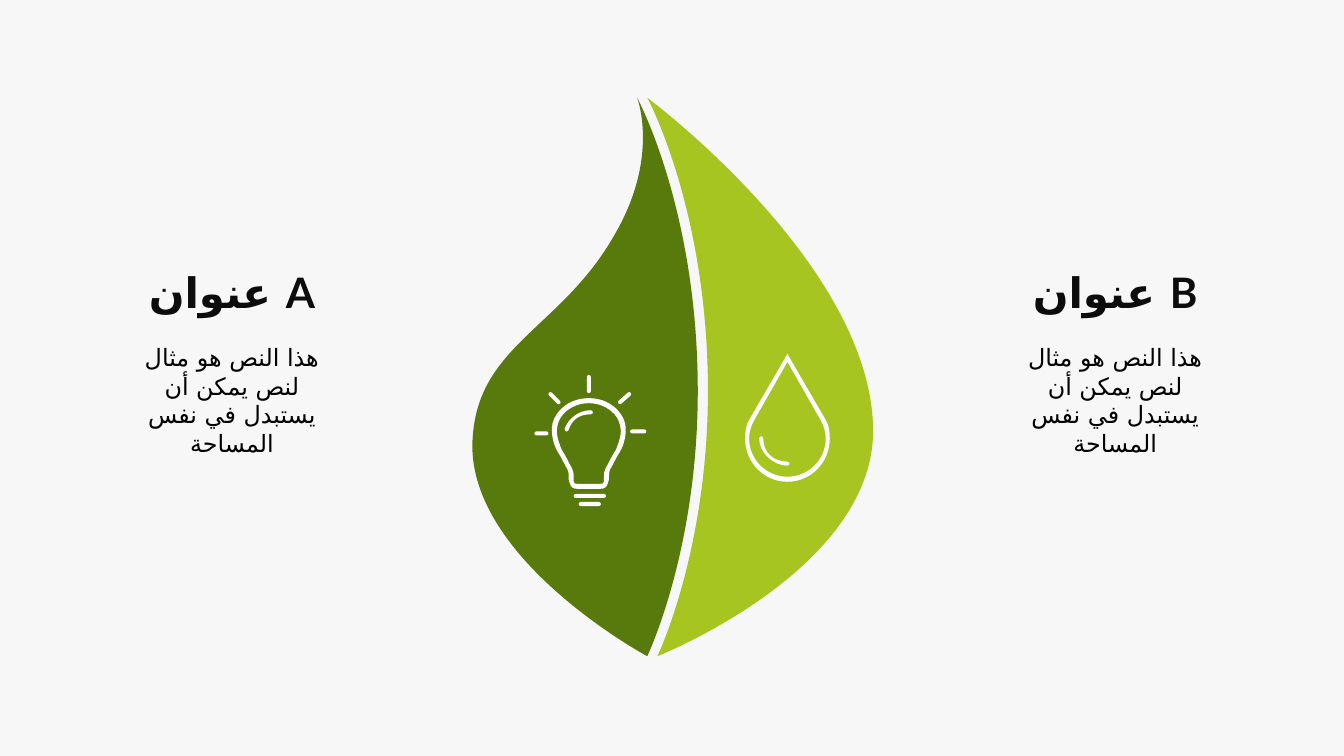
"""Build a two-part leaf comparison slide with a light bulb and a water drop."""
from dataclasses import dataclass
from math import hypot

from lxml import etree
from pptx import Presentation
from pptx.dml.color import RGBColor
from pptx.enum.text import MSO_ANCHOR, MSO_AUTO_SIZE, PP_ALIGN
from pptx.oxml.ns import qn
from pptx.util import Inches, Pt

TOP = MSO_ANCHOR.TOP
CENTER = PP_ALIGN.CENTER
NO_AUTOFIT = MSO_AUTO_SIZE.NONE


@dataclass(frozen=True)
class Theme:
    background: RGBColor = RGBColor.from_string("F7F7F7")
    dark_leaf: RGBColor = RGBColor.from_string("587A0D")
    light_leaf: RGBColor = RGBColor.from_string("A7C520")
    icon: RGBColor = RGBColor.from_string("FFFFFF")
    heading: RGBColor = RGBColor.from_string("0C0C0C")
    body: RGBColor = RGBColor.from_string("000000")
    font: str = "Lato"
    arabic_font: str = "DejaVu Sans"
    heading_size: int = 30
    body_size: int = 17


THEME = Theme()
COMPARISON_LAYOUT = 4
BAND_RADIUS = 0.02
BODY = "هذا النص هو مثال لنص يمكن أن يستبدل في نفس المساحة"
COLUMNS = [
    {"heading": "عنوان A", "body": BODY, "center": 2.3, "slots": (1, 2)},
    {"heading": "عنوان B", "body": BODY, "center": 11.06, "slots": (3, 4)},
]
HEADING_BOX = {"top": 2.64, "width": 1.8, "height": 0.72, "margins": (0, 0)}
BODY_BOX = {"top": 3.35, "width": 2.24, "height": 1.24, "margins": (0.1, 0.05)}

DARK_LEAF = [
    (6.92, 3.74),
    (6.89, 2.02), (6.32, 0.97), (6.32, 0.97),
    (6.32, 0.97), (6.55, 1.56), (6.09, 2.34),
    (5.57, 3.25), (4.76, 3.42), (4.69, 4.32),
    (4.58, 5.52), (6.42, 6.51), (6.42, 6.51),
    (6.42, 6.51), (6.95, 5.41), (6.92, 3.74),
]
LIGHT_LEAF = [
    (6.42, 0.97),
    (6.42, 0.97), (6.99, 2.02), (7.02, 3.74),
    (7.05, 5.41), (6.52, 6.51), (6.52, 6.51),
    (6.52, 6.51), (8.67, 5.66), (8.66, 4.26),
    (8.64, 2.62), (6.42, 0.97), (6.42, 0.97),
]
BULB_OUTER = [
    (5.84, 3.95),
    (6.04, 3.95), (6.17, 4.08), (6.2, 4.2),
    (6.22, 4.3), (6.19, 4.41), (6.15, 4.48),
    (6.11, 4.54), (6.09, 4.59), (6.05, 4.66),
    (6.04, 4.68), (6.04, 4.7), (6.04, 4.73),
    (6.04, 4.75), (6.04, 4.77), (6.03, 4.79),
    (6.02, 4.83), (6, 4.85), (5.95, 4.85),
]
BULB_INNER = [
    (5.84, 4),
    (6.01, 4), (6.13, 4.11), (6.15, 4.22),
    (6.17, 4.28), (6.15, 4.36), (6.11, 4.46),
    (6.07, 4.52), (6.05, 4.57), (6.01, 4.64),
    (5.99, 4.67), (5.99, 4.7), (5.99, 4.73),
    (5.99, 4.75), (5.99, 4.76), (5.99, 4.78),
    (5.98, 4.8), (5.98, 4.8), (5.95, 4.8),
]
BULB_GLEAM = [(5.62, 4.26), (5.65, 4.17), (5.73, 4.09), (5.86, 4.09)]
BULB_LINES = [
    ((5.32, 4.3), (5.42, 4.3)),
    ((5.46, 3.91), (5.54, 3.99)),
    ((5.84, 3.74), (5.84, 3.88)),
    ((6.24, 3.91), (6.15, 3.99)),
    ((6.27, 4.28), (6.39, 4.28)),
    ((5.71, 4.92), (5.99, 4.92)),
    ((5.76, 5), (5.94, 5)),
]
DROP_OUTER = [
    (7.81, 3.51),
    (7.81, 3.51), (7.82, 3.52), (7.82, 3.53),
    (7.82, 3.53), (8.18, 4.15), (8.18, 4.15),
    (8.22, 4.21), (8.23, 4.28), (8.23, 4.35),
    (8.23, 4.59), (8.04, 4.78), (7.81, 4.78),
]
DROP_INNER = [
    (7.81, 3.59),
    (7.81, 3.59), (8.14, 4.17), (8.14, 4.17),
    (8.17, 4.22), (8.19, 4.29), (8.19, 4.35),
    (8.19, 4.56), (8.02, 4.73), (7.81, 4.73),
]
DROP_GLEAM = [(7.55, 4.35), (7.55, 4.49), (7.67, 4.6), (7.81, 4.6)]
HALVES = [
    {"leaf": DARK_LEAF, "color": THEME.dark_leaf, "gleam": BULB_GLEAM,
     "rims": (BULB_OUTER, BULB_INNER), "lines": BULB_LINES},
    {"leaf": LIGHT_LEAF, "color": THEME.light_leaf, "gleam": DROP_GLEAM,
     "rims": (DROP_OUTER, DROP_INNER), "lines": []},
]


def mirrored(half):
    axis = half[0][0]
    other = [(2 * axis - x, y) for x, y in reversed(half)]
    if half[-1] == other[0]:
        return half + other[1:]
    return half + [half[-1], other[0]] + other


def straight(start, end):
    return [tuple(a + (b - a) * step / 3 for a, b in zip(start, end)) for step in range(4)]


def band(curve):
    sides = []
    for tail, tip in (curve[:2], curve[2:]):
        dx, dy = tip[0] - tail[0], tip[1] - tail[1]
        scale = BAND_RADIUS / hypot(dx, dy)
        sides.append((dx * scale, dy * scale))
    tangents = [sides[0], sides[0], sides[1], sides[1]]
    left = [(x - ty, y + tx) for (x, y), (tx, ty) in zip(curve, tangents)]
    right = [(x + ty, y - tx) for (x, y), (tx, ty) in zip(curve, tangents)]

    def cap(first, last, tangent, sign):
        return [tuple(v + sign * t * 4 / 3 for v, t in zip(point, tangent))
                for point in (first, last)]

    return (left + cap(left[3], right[3], sides[1], 1) + right[::-1]
            + cap(right[0], left[0], sides[0], -1) + left[:1])


def add_outline(group, contours, color):
    paths = [[(Inches(x), Inches(y)) for x, y in contour] for contour in contours]
    builder = group.shapes.build_freeform(*paths[0][0], scale=1.0)
    for number, points in enumerate(paths):
        if number:
            builder.move_to(*points[0])
        builder.add_line_segments(points[1:], close=True)
    outline = builder.convert_to_shape()
    segments = list(outline._element.iter(qn("a:lnTo")))
    for first in range(0, len(segments), 3):
        cubic = etree.Element(qn("a:cubicBezTo"))
        segments[first].addprevious(cubic)
        for segment in segments[first:first + 3]:
            cubic.append(segment[0])
            segment.getparent().remove(segment)
    outline.shadow.inherit = False
    outline.fill.solid()
    outline.fill.fore_color.rgb = color
    outline.line.fill.background()


def add_half(slide, half):
    group = slide.shapes.add_group_shape()
    add_outline(group, [half["leaf"]], half["color"])
    strokes = [half["gleam"]] + [straight(*line) for line in half["lines"]]
    icon = [mirrored(rim) for rim in half["rims"]] + [band(stroke) for stroke in strokes]
    add_outline(group, icon, THEME.icon)


def fill_text(holder, text, center, box, size, color, bold):
    holder.left, holder.top = Inches(center - box["width"] / 2), Inches(box["top"])
    holder.width, holder.height = Inches(box["width"]), Inches(box["height"])
    frame = holder.text_frame
    side, edge = map(Inches, box["margins"])
    frame.margin_left = frame.margin_right = side
    frame.margin_top = frame.margin_bottom = edge
    frame.vertical_anchor = TOP
    frame.auto_size = NO_AUTOFIT
    frame.word_wrap = True
    paragraph = frame.paragraphs[0]
    paragraph.alignment = CENTER
    paragraph.space_before = Pt(0)
    properties = paragraph._p.get_or_add_pPr()
    properties.set("marL", "0")
    properties.set("indent", "0")
    etree.SubElement(properties, qn("a:buNone"))
    run = paragraph.add_run()
    run.text = text
    run.font.name = THEME.font
    run.font.size = Pt(size)
    run.font.bold = bold
    run.font.color.rgb = color
    etree.SubElement(run._r.get_or_add_rPr(), qn("a:cs"), typeface=THEME.arabic_font)


def main():
    deck = Presentation()
    deck.slide_width, deck.slide_height = Inches(13.33), Inches(7.5)
    slide = deck.slides.add_slide(deck.slide_layouts[COMPARISON_LAYOUT])
    slide.background.fill.solid()
    slide.background.fill.fore_color.rgb = THEME.background
    title = slide.shapes.title._element
    title.getparent().remove(title)
    holders = {holder.placeholder_format.idx: holder for holder in slide.placeholders}
    for column in COLUMNS:
        heading, body = (holders[slot] for slot in column["slots"])
        fill_text(heading, column["heading"], column["center"], HEADING_BOX,
                  THEME.heading_size, THEME.heading, True)
        fill_text(body, column["body"], column["center"], BODY_BOX,
                  THEME.body_size, THEME.body, False)
    for half in HALVES:
        add_half(slide, half)
    deck.save("out.pptx")


if __name__ == "__main__":
    main()
